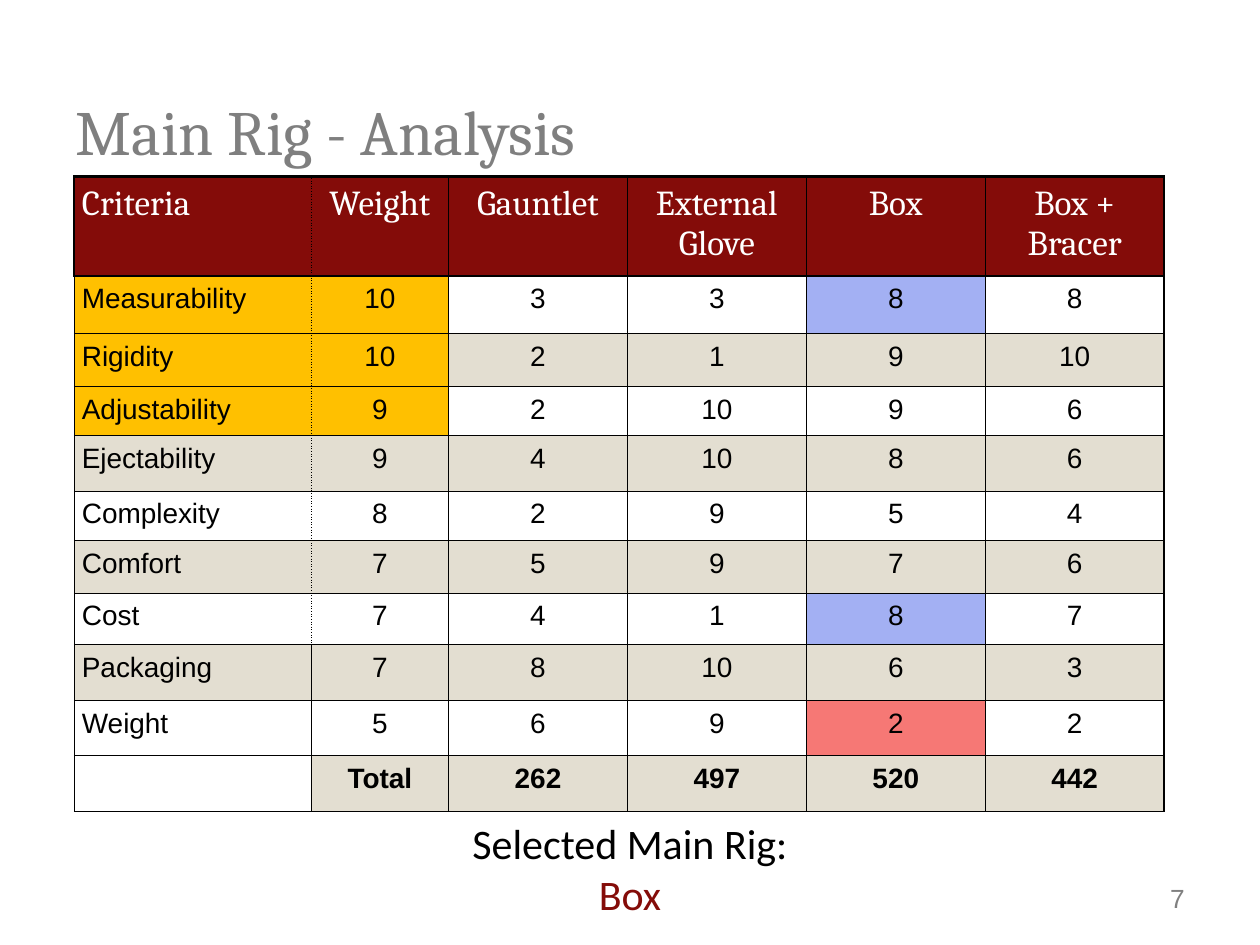
"""Build the main rig decision matrix slide."""
from dataclasses import dataclass

from lxml import etree
from pptx import Presentation
from pptx import util as u
from pptx.dml.color import RGBColor
from pptx.enum import text
from pptx.oxml import ns


@dataclass(frozen=True)
class Face:
    font: str
    size: float
    color: str
    bold: bool = False


@dataclass(frozen=True)
class Theme:
    title: Face = Face("Cambria", 36, "7F7F7F")
    header: Face = Face("Cambria", 20, "FFFFFF")
    body: Face = Face("Arial", 16, "000000")
    total: Face = Face("Arial", 16, "000000", True)
    caption: Face = Face("Calibri", 24, "000000")
    choice: Face = Face("Calibri", 24, "840C09")
    number: Face = Face("Arial", 15, "808080")
    head_fill: str = "840C09"
    key_fill: str = "FFC000"
    band_fill: str = "E3DED1"
    good_fill: str = "A3B0F3"
    bad_fill: str = "F67875"
    line: str = "000000"
    thin: float = 0.75
    medium: float = 1
    thick: float = 1.5


@dataclass(frozen=True)
class Area:
    left: float
    top: float
    width: float
    height: float

    def lengths(self) -> list[int]:
        return [u.Inches(n) for n in (self.left, self.top, self.width, self.height)]


@dataclass(frozen=True)
class Row:
    height: float
    values: tuple[str, ...]


THEME = Theme()
LEFT, CENTER, RIGHT = text.PP_ALIGN.LEFT, text.PP_ALIGN.CENTER, text.PP_ALIGN.RIGHT
COLUMNS = (1.88, 1.09) + (1.42,) * 4
ROWS = (
    Row(0.79, ("Criteria", "Weight", "Gauntlet", "External Glove", "Box", "Box + Bracer")),
    Row(0.46, ("Measurability", "10", "3", "3", "8", "8")),
    Row(0.42, ("Rigidity", "10", "2", "1", "9", "10")),
    Row(0.39, ("Adjustability", "9", "2", "10", "9", "6")),
    Row(0.44, ("Ejectability", "9", "4", "10", "8", "6")),
    Row(0.39, ("Complexity", "8", "2", "9", "5", "4")),
    Row(0.42, ("Comfort", "7", "5", "9", "7", "6")),
    Row(0.41, ("Cost", "7", "4", "1", "8", "7")),
    Row(0.44, ("Packaging", "7", "8", "10", "6", "3")),
    Row(0.44, ("Weight", "5", "6", "9", "2", "2")),
    Row(0.44, ("", "Total", "262", "497", "520", "442")),
)
LAST_ROW, LAST_COLUMN = len(ROWS) - 1, len(COLUMNS) - 1
LAST_KEY_ROW, LAST_DOTTED_ROW = 3, 7
MARKS = {(1, 4): THEME.good_fill, (7, 4): THEME.good_fill, (9, 4): THEME.bad_fill}


def style(para, face: Face, align) -> None:
    """Apply a type face and an alignment to a paragraph."""
    para.alignment = align
    font = para.font
    font.name, font.size, font.bold = face.font, u.Pt(face.size), face.bold
    font.color.rgb = RGBColor.from_string(face.color)


def add_text(page, area: Area, lines: list[tuple[str, Face]], align) -> None:
    """Add a wrapped text box with one paragraph per line."""
    frame = page.shapes.add_textbox(*area.lengths()).text_frame
    frame.word_wrap = True
    frame.text = "\n".join(words for words, _ in lines)
    for para, (_, face) in zip(frame.paragraphs, lines):
        style(para, face, align)


def cell_fill(row: int, column: int) -> str | None:
    """Choose the fill colour of a cell."""
    if row == 0:
        return THEME.head_fill
    if (row, column) in MARKS:
        return MARKS[row, column]
    if row <= LAST_KEY_ROW and column < 2:
        return THEME.key_fill
    if row % 2 == 0 and (row, column) != (LAST_ROW, 0):
        return THEME.band_fill
    return None


def vertical_line(row: int, edge: int) -> tuple[float, str]:
    """Give width and dash of the line at a column edge."""
    if row == 0 and edge in (0, LAST_COLUMN + 1):
        return THEME.thick, "solid"
    if edge == 1 and row <= LAST_DOTTED_ROW:
        return THEME.thin, "sysDot"
    return (THEME.medium if edge == 2 else THEME.thin), "solid"


def horizontal_line(edge: int) -> tuple[float, str]:
    """Give width and dash of the line at a row edge."""
    return (THEME.thick if edge < 2 else THEME.thin), "solid"


def add_border(cell, side: str, width: float, dash: str) -> None:
    """Draw one side of a cell."""
    line = etree.SubElement(cell._tc.get_or_add_tcPr(), ns.qn(f"a:ln{side}"), w=str(u.Pt(width)))
    fill = etree.SubElement(line, ns.qn("a:solidFill"))
    etree.SubElement(fill, ns.qn("a:srgbClr"), val=THEME.line)
    etree.SubElement(line, ns.qn("a:prstDash"), val=dash)


def format_cell(cell, row: int, column: int) -> None:
    """Write and format one cell of the matrix."""
    cell.text = ROWS[row].values[column]
    cell.margin_left = cell.margin_right = u.Inches(0.06)
    cell.margin_top = cell.margin_bottom = u.Inches(0.06)
    face = {0: THEME.header, LAST_ROW: THEME.total}.get(row, THEME.body)
    style(cell.text_frame.paragraphs[0], face, CENTER if column else LEFT)
    add_border(cell, "L", *vertical_line(row, column))
    add_border(cell, "R", *vertical_line(row, column + 1))
    add_border(cell, "T", *horizontal_line(row))
    add_border(cell, "B", *horizontal_line(row + 1))
    color = cell_fill(row, column)
    if color:
        cell.fill.solid()
        cell.fill.fore_color.rgb = RGBColor.from_string(color)
    else:
        cell.fill.background()


def add_matrix(page, left: float, top: float) -> None:
    """Add the decision matrix table."""
    area = Area(left, top, sum(COLUMNS), sum(row.height for row in ROWS))
    table = page.shapes.add_table(len(ROWS), len(COLUMNS), *area.lengths()).table
    table.first_row = table.horz_banding = False
    for column, width in zip(table.columns, COLUMNS):
        column.width = u.Inches(width)
    for index, row in enumerate(ROWS):
        table.rows[index].height = u.Inches(row.height)
        for column in range(len(COLUMNS)):
            format_cell(table.cell(index, column), index, column)


def set_title(page, area: Area, words: str) -> None:
    """Place and format the title placeholder."""
    title = page.shapes.title
    title.left, title.top, title.width, title.height = area.lengths()
    frame = title.text_frame
    frame.text = words
    frame.auto_size = text.MSO_AUTO_SIZE.NONE
    frame.vertical_anchor = text.MSO_ANCHOR.MIDDLE
    style(frame.paragraphs[0], THEME.title, LEFT)


def main() -> None:
    """Build and save the deck."""
    deck = Presentation()
    deck.slide_width, deck.slide_height = u.Inches(10), u.Inches(7.5)
    page = deck.slides.add_slide(deck.slide_layouts[5])
    add_text(page, Area(7.06, 6.95, 2.44, 0.4), [("7", THEME.number)], RIGHT)
    set_title(page, Area(0.5, 0.67, 9, 0.73), "Main Rig - Analysis")
    caption = [("Selected Main Rig:", THEME.caption), ("Box", THEME.choice)]
    add_text(page, Area(2.78, 6.44, 4.44, 0.91), caption, CENTER)
    add_matrix(page, 0.59, 1.4)
    deck.save("out.pptx")


if __name__ == "__main__":
    main()
